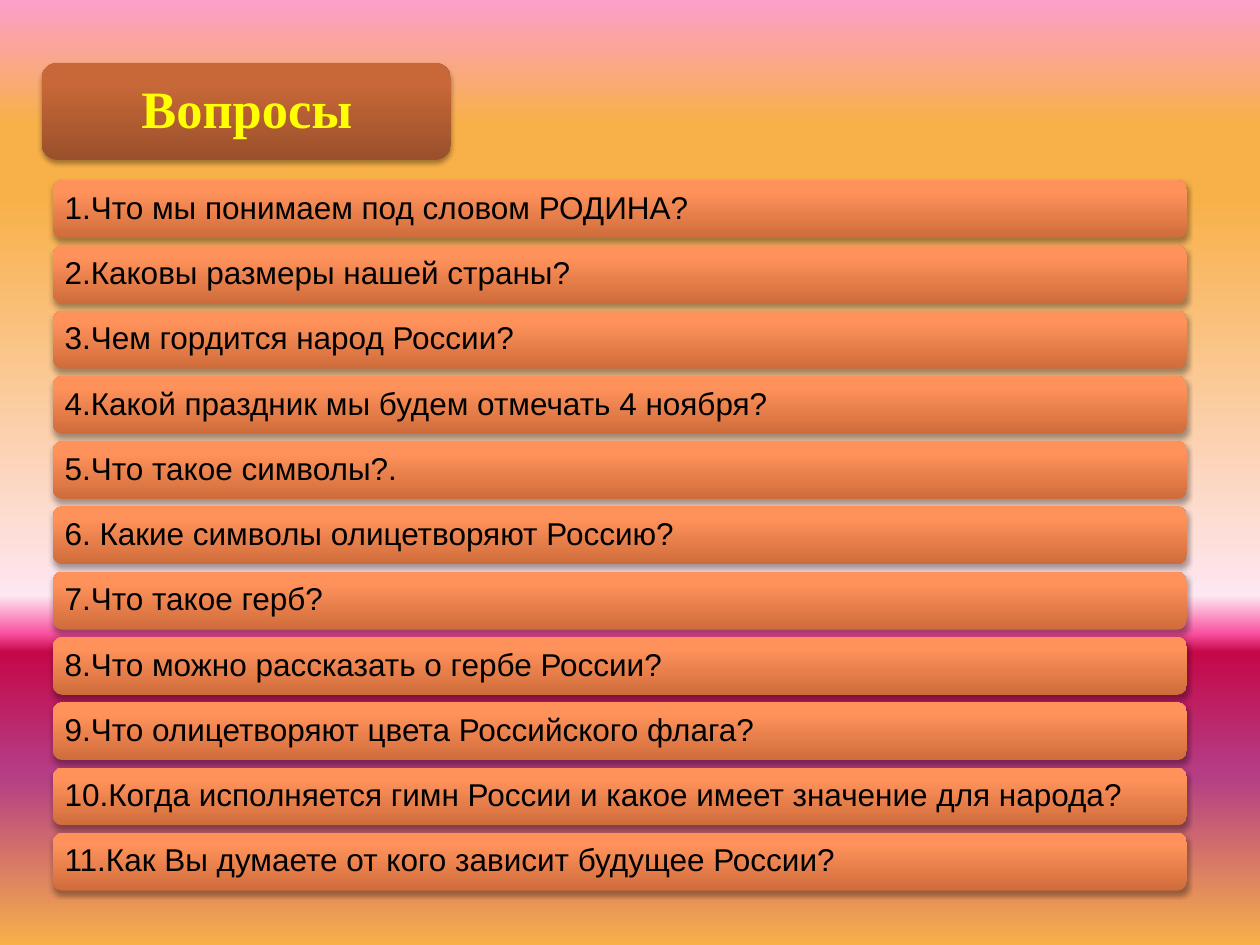
import lxml.etree
import pptx
import pptx.dml.color
import pptx.enum.shapes
import pptx.enum.text
import pptx.oxml.ns
import pptx.util

Inches = pptx.util.Inches
RGBColor = pptx.dml.color.RGBColor
qn = pptx.oxml.ns.qn

BLACK = RGBColor(0x00, 0x00, 0x00)
YELLOW = RGBColor(0xFF, 0xFF, 0x00)
ORANGE_STOPS = [
    (0, RGBColor(0xCF, 0x6C, 0x3B)),
    (80, RGBColor(0xFF, 0x92, 0x5B)),
    (100, RGBColor(0xFF, 0x93, 0x5D)),
]
BROWN_STOPS = [
    (0, RGBColor(0x9A, 0x50, 0x2B)),
    (80, RGBColor(0xC8, 0x68, 0x38)),
    (100, RGBColor(0xCB, 0x68, 0x36)),
]
SUNSET_STOPS = [
    (0, RGBColor(0xFC, 0x9F, 0xCB)),
    (13, RGBColor(0xF8, 0xB0, 0x49)),
    (21, RGBColor(0xF8, 0xB0, 0x49)),
    (63, RGBColor(0xFE, 0xE7, 0xF2)),
    (67, RGBColor(0xF9, 0x52, 0xA0)),
    (69, RGBColor(0xC5, 0x08, 0x49)),
    (82, RGBColor(0xB4, 0x3E, 0x85)),
    (100, RGBColor(0xF8, 0xB0, 0x49)),
]
QUESTIONS = [
    "1.Что мы понимаем под словом РОДИНА?",
    "2.Каковы размеры нашей страны?",
    "3.Чем гордится народ России?",
    "4.Какой праздник мы будем отмечать 4 ноября?",
    "5.Что такое символы?.",
    "6. Какие символы олицетворяют Россию?",
    "7.Что такое герб?",
    "8.Что можно рассказать о гербе России?",
    "9.Что олицетворяют цвета Российского флага?",
    "10.Когда исполняется гимн России и какое имеет значение для народа?",
    "11.Как Вы думаете от кого зависит будущее России?",
]
FIRST_TOP, LAST_TOP = 1.43, 6.61
ALIGN = pptx.enum.text.PP_ALIGN


def apply_gradient(fill, owner, stops, angle):
    """Fill with the given stops, angle counted counter-clockwise."""
    fill.gradient()
    fill.gradient_angle = angle
    stop_list = owner.find(".//" + qn("a:gsLst"))
    for stop in list(stop_list):
        stop_list.remove(stop)
    for percent, color in stops:
        stop = lxml.etree.SubElement(stop_list, qn("a:gs"), pos=str(percent * 1000))
        lxml.etree.SubElement(stop, qn("a:srgbClr"), val=str(color))


def add_shadow(shape):
    """Give the shape a soft shadow straight below it."""
    shape.shadow.inherit = False
    effects = shape._element.spPr.find(qn("a:effectLst"))
    shadow = lxml.etree.SubElement(
        effects, qn("a:outerShdw"), blurRad=str(pptx.util.Pt(3.1)),
        dist=str(pptx.util.Pt(1.8)), dir="5400000", rotWithShape="0")
    color = lxml.etree.SubElement(shadow, qn("a:srgbClr"), val=str(BLACK))
    lxml.etree.SubElement(color, qn("a:alpha"), val="35000")


def add_plate(page, left, top, width, height, stops):
    """Add a rounded plate with a gradient and a shadow."""
    plate = page.shapes.add_shape(
        pptx.enum.shapes.MSO_SHAPE.ROUNDED_RECTANGLE,
        Inches(left), Inches(top), Inches(width), Inches(height))
    apply_gradient(plate.fill, plate._element.spPr, stops, 90)
    plate.line.fill.background()
    add_shadow(plate)
    return plate


def write_text(shape, text, font, size, color, align, inset, bold=False):
    """Write one line of text, centred vertically in the shape."""
    frame = shape.text_frame
    frame.word_wrap = True
    frame.auto_size = pptx.enum.text.MSO_AUTO_SIZE.NONE
    frame.vertical_anchor = pptx.enum.text.MSO_ANCHOR.MIDDLE
    frame.margin_left = frame.margin_right = Inches(inset)
    frame.margin_top = frame.margin_bottom = Inches(inset)
    para = frame.paragraphs[0]
    para.alignment = align
    para.line_spacing = 0.9
    span = para.add_run()
    span.text = text
    span.font.name = font
    span.font.size = pptx.util.Pt(size)
    span.font.bold = bold
    span.font.color.rgb = color


def add_title(page, text):
    """Set the title placeholder on its brown plate."""
    plate = add_plate(page, 0.33, 0.5, 3.25, 0.77, BROWN_STOPS)
    title = page.shapes.title
    title.left, title.top = Inches(0.37), Inches(0.54)
    title.width, title.height = Inches(3.18), Inches(0.69)
    write_text(title, text, "Times New Roman", 30, YELLOW, ALIGN.CENTER, 0.12, True)
    plate._element.addnext(title._element)


def add_questions(page, questions):
    """Stack the questions as evenly spaced bars."""
    step = (LAST_TOP - FIRST_TOP) / (len(questions) - 1)
    for row, question in enumerate(questions):
        bar = add_plate(page, 0.42, FIRST_TOP + row * step, 9, 0.46, ORANGE_STOPS)
        write_text(bar, question, "Arial", 18, BLACK, ALIGN.LEFT, 0.07)


def main():
    """Build the slide of questions and save it."""
    deck = pptx.Presentation()
    deck.slide_width, deck.slide_height = Inches(10), Inches(7.5)
    page = deck.slides.add_slide(deck.slide_layouts.get_by_name("Title Only"))
    apply_gradient(page.background.fill, page._element, SUNSET_STOPS, 270)
    add_questions(page, QUESTIONS)
    add_title(page, "Вопросы")
    deck.save("out.pptx")


if __name__ == "__main__":
    main()
